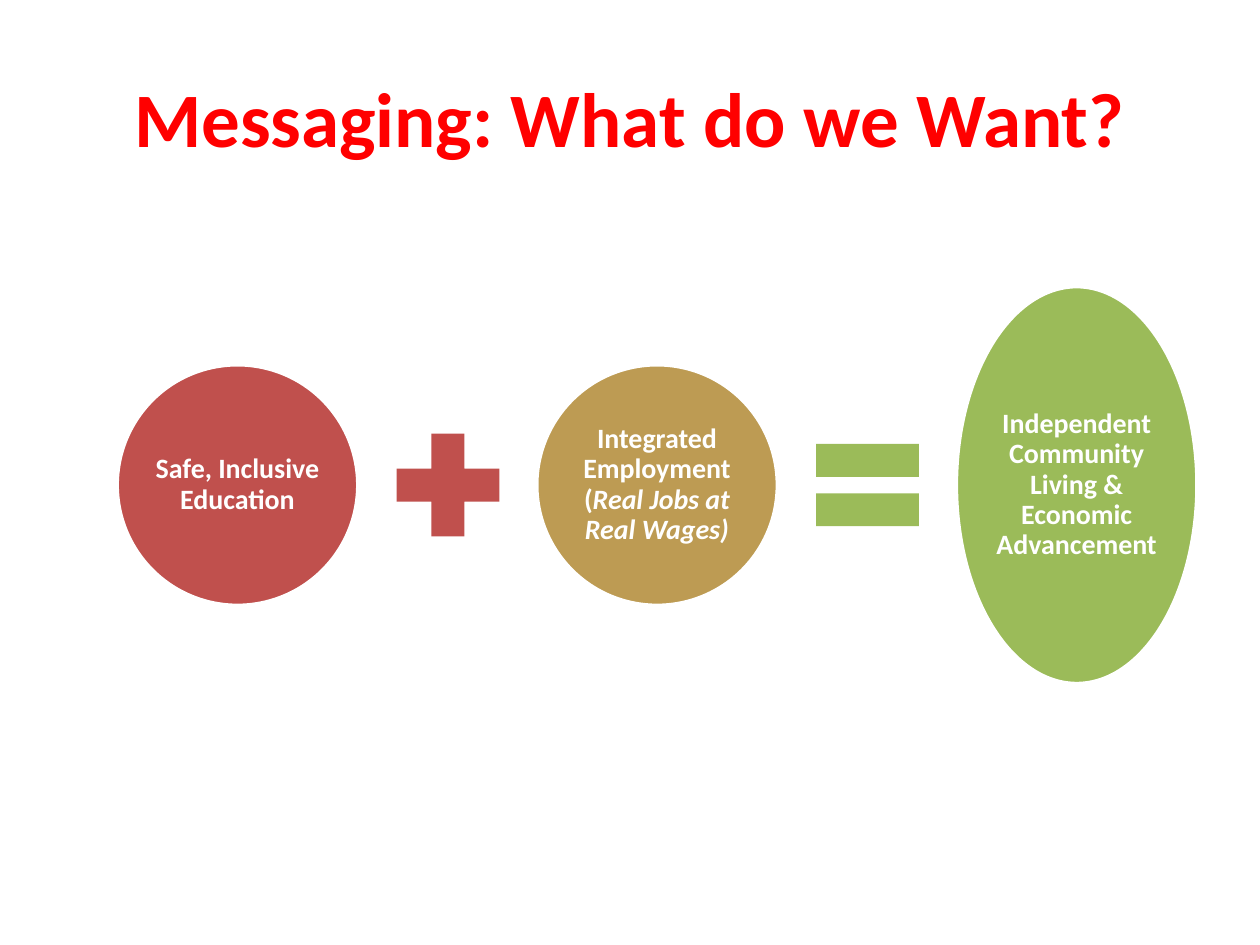
from pptx import Presentation
from pptx.dml.color import RGBColor
from pptx.enum.shapes import MSO_SHAPE
from pptx.enum.text import MSO_ANCHOR, PP_ALIGN
from pptx.util import Inches, Pt

OVAL = MSO_SHAPE.OVAL
PLUS = MSO_SHAPE.MATH_PLUS
EQUAL = MSO_SHAPE.MATH_EQUAL
MIDDLE = MSO_ANCHOR.MIDDLE
CENTER = PP_ALIGN.CENTER

RED = RGBColor(0xFF, 0x00, 0x00)
BRICK = RGBColor(0xC0, 0x50, 0x4D)
GOLD = RGBColor(0xBD, 0x9B, 0x53)
GREEN = RGBColor(0x9B, 0xBB, 0x59)
WHITE = RGBColor(0xFF, 0xFF, 0xFF)

CENTER_Y = 3.85
FIRST_LEFT = 0.93
STEP = 3.33
OVAL_WIDTH = 1.91
OPERATOR_OFFSET = 2.07
OPERATOR_SIZE = 1.11
INSET = 0.02

TITLE_FONT = {"name": "Calibri", "size": Pt(44), "bold": True}
LABEL_FONT = {"name": "Calibri", "size": Pt(16), "bold": True}

TERMS = [
    (BRICK, 1.91, [("Safe, Inclusive Education", False)]),
    (GOLD, 1.91, [("Integrated Employment (", False), ("Real Jobs at Real Wages)", True)]),
    (GREEN, 3.15, [("Independent Community Living & Economic Advancement", False)]),
]
OPERATORS = [(PLUS, BRICK), (EQUAL, GREEN)]


def format_font(font, values, color):
    for name, value in values.items():
        setattr(font, name, value)
    font.color.rgb = color


def set_title(slide, text):
    title = slide.shapes.title
    title.left, title.top = Inches(0.5), Inches(0.3)
    title.width, title.height = Inches(9), Inches(1.25)
    title.text_frame.vertical_anchor = MIDDLE
    paragraph = title.text_frame.paragraphs[0]
    paragraph.alignment = CENTER
    run = paragraph.add_run()
    run.text = text
    format_font(run.font, TITLE_FONT, RED)


def add_centered_shape(slide, kind, left, width, height, color):
    shape = slide.shapes.add_shape(
        kind, Inches(left), Inches(CENTER_Y - height / 2), Inches(width), Inches(height)
    )
    shape.shadow.inherit = False
    shape.fill.solid()
    shape.fill.fore_color.rgb = color
    return shape


def add_term(slide, left, height, color, runs):
    oval = add_centered_shape(slide, OVAL, left, OVAL_WIDTH, height, color)
    oval.line.color.rgb = WHITE
    oval.line.width = Pt(2)
    frame = oval.text_frame
    frame.word_wrap = True
    frame.vertical_anchor = MIDDLE
    for side in ("left", "top", "right", "bottom"):
        setattr(frame, f"margin_{side}", Inches(INSET))
    paragraph = frame.paragraphs[0]
    paragraph.alignment = CENTER
    paragraph.line_spacing = 0.9
    for text, italic in runs:
        run = paragraph.add_run()
        run.text = text
        format_font(run.font, {**LABEL_FONT, "italic": italic}, WHITE)


def add_operator(slide, kind, left, color):
    operator = add_centered_shape(slide, kind, left, OPERATOR_SIZE, OPERATOR_SIZE, color)
    operator.line.fill.background()


def main():
    presentation = Presentation()
    presentation.slide_width = Inches(10)
    presentation.slide_height = Inches(7.5)
    slide = presentation.slides.add_slide(presentation.slide_layouts[5])
    set_title(slide, "Messaging: What do we Want?")
    for index, (color, height, runs) in enumerate(TERMS):
        add_term(slide, FIRST_LEFT + index * STEP, height, color, runs)
    for index, (kind, color) in enumerate(OPERATORS):
        add_operator(slide, kind, FIRST_LEFT + OPERATOR_OFFSET + index * STEP, color)
    presentation.save("out.pptx")


if __name__ == "__main__":
    main()
